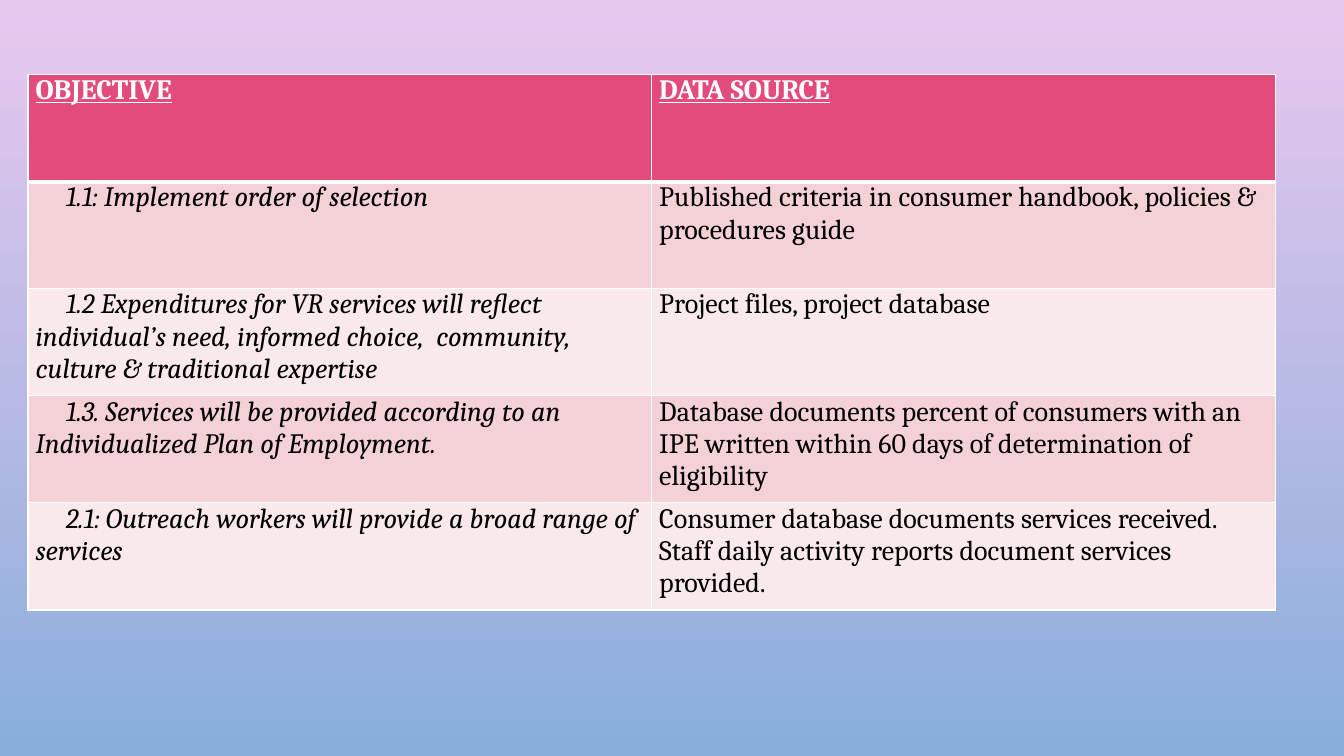
from lxml.etree import SubElement
from pptx import Presentation
from pptx.dml.color import RGBColor
from pptx.oxml.ns import qn
from pptx.util import Pt

OBJECTIVES = [
    ("OBJECTIVE", "DATA SOURCE"),
    ("1.1: Implement order of selection",
     "Published criteria in consumer handbook, policies & procedures guide"),
    ("1.2 Expenditures for VR services will reflect individual’s need, "
     "informed choice,  community, culture & traditional expertise",
     "Project files, project database"),
    ("1.3. Services will be provided according to an Individualized Plan of Employment.",
     "Database documents percent of consumers with an IPE written within 60 days "
     "of determination of eligibility"),
    ("2.1: Outreach workers will provide a broad range of services",
     "Consumer database documents services received. Staff daily activity reports "
     "document services provided."),
]


def color(value):
    return RGBColor.from_string(value)


class ObjectivesSlide:
    font_name = "Cambria"
    font_size = Pt(20)
    white = "FFFFFF"
    black = "000000"
    header_fill = "E34B7A"
    band_fills = ("FAE9EC", "F4D0D7")
    cell_margin = Pt(5.4)
    first_line_indent = Pt(21.6)
    thin_line = Pt(1)
    thick_line = Pt(3)

    def __init__(self, presentation):
        self.slide = presentation.slides.add_slide(presentation.slide_layouts[6])

    def background(self, top_color, bottom_color):
        fill = self.slide.background.fill
        fill.gradient()
        fill.gradient_angle = 270
        for stop, value, position in zip(fill.gradient_stops, (top_color, bottom_color), (0, 1)):
            stop.color.rgb = color(value)
            stop.position = position

    def table(self, rows, left, top, column_width, row_height):
        column_count = len(rows[0])
        frame = self.slide.shapes.add_table(
            len(rows), column_count, left, top,
            column_width * column_count, row_height * len(rows))
        table = frame.table
        for column in table.columns:
            column.width = column_width
        for row_index, texts in enumerate(rows):
            table.rows[row_index].height = row_height
            for column_index, text in enumerate(texts):
                self.cell(table.cell(row_index, column_index), text, row_index, column_index)

    def cell(self, cell, text, row_index, column_index):
        is_header = row_index == 0
        is_objective = column_index == 0 and not is_header
        cell.margin_left = cell.margin_right = self.cell_margin
        cell.margin_top = cell.margin_bottom = 0
        self.borders(cell, row_index)
        cell.fill.solid()
        cell.fill.fore_color.rgb = color(
            self.header_fill if is_header else self.band_fills[row_index % 2])
        cell.text_frame.text = text
        paragraph = cell.text_frame.paragraphs[0]
        if is_objective:
            properties = paragraph._p.get_or_add_pPr()
            properties.set("marL", "0")
            properties.set("indent", str(int(self.first_line_indent)))
        font = paragraph.runs[0].font
        font.name = self.font_name
        font.size = self.font_size
        font.bold = font.underline = is_header
        font.italic = is_objective
        font.color.rgb = color(self.white if is_header else self.black)

    def borders(self, cell, row_index):
        widths = {
            "a:lnL": self.thin_line,
            "a:lnR": self.thin_line,
            "a:lnT": self.thick_line if row_index == 1 else self.thin_line,
            "a:lnB": self.thick_line if row_index == 0 else self.thin_line,
        }
        properties = cell._tc.get_or_add_tcPr()
        for tag, width in widths.items():
            line = SubElement(properties, qn(tag), w=str(int(width)))
            fill = SubElement(line, qn("a:solidFill"))
            SubElement(fill, qn("a:srgbClr"), val=self.white)


def main():
    presentation = Presentation()
    presentation.slide_width = Pt(960)
    presentation.slide_height = Pt(540)
    slide = ObjectivesSlide(presentation)
    slide.background("E9C8EF", "89AEDB")
    slide.table(OBJECTIVES, Pt(20), Pt(53.3), Pt(445.5), Pt(76.5))
    presentation.save("out.pptx")


if __name__ == "__main__":
    main()
